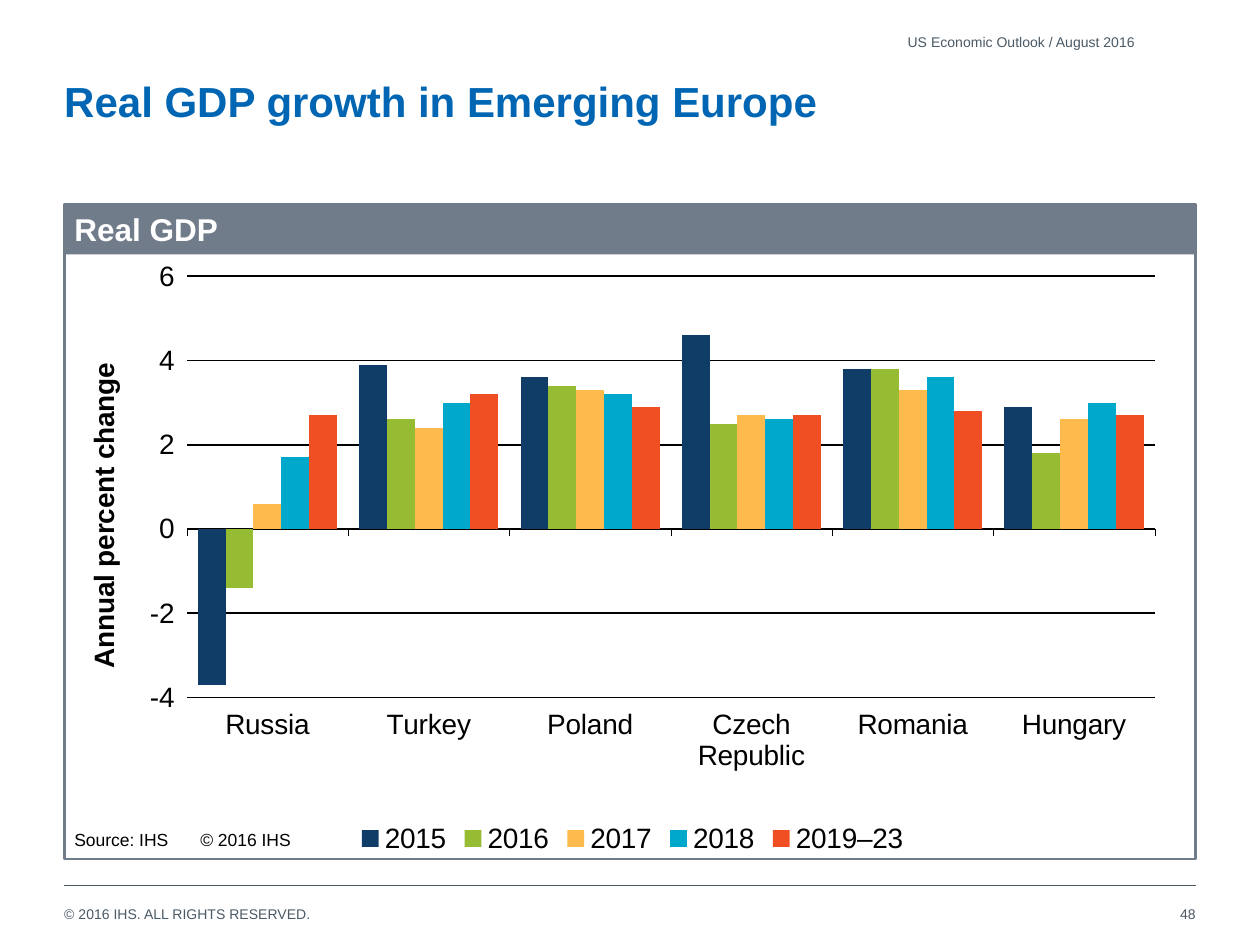
from lxml import etree
from pptx import Presentation
from pptx.chart.data import CategoryChartData
from pptx.dml.color import RGBColor
from pptx.enum.chart import XL_CHART_TYPE, XL_LEGEND_POSITION, XL_TICK_LABEL_POSITION, XL_TICK_MARK
from pptx.enum.shapes import MSO_CONNECTOR, MSO_SHAPE
from pptx.enum.text import MSO_ANCHOR, PP_ALIGN
from pptx.oxml import parse_xml
from pptx.oxml.ns import nsdecls, qn
from pptx.util import Pt

BLACK = RGBColor(0x00, 0x00, 0x00)
WHITE = RGBColor(0xFF, 0xFF, 0xFF)
BLUE = RGBColor(0x00, 0x66, 0xB3)
SLATE = RGBColor(0x49, 0x59, 0x65)
GRAY = RGBColor(0x70, 0x7C, 0x8A)
FONT = "Arial"
LEFT, WIDTH = 36.7, 646.6
PANEL_TOP, PANEL_HEIGHT = 116.6, 374.4

CATEGORIES = ["Russia", "Turkey", "Poland", "Czech Republic", "Romania", "Hungary"]
SERIES = [
    ("2015", [-3.7, 3.9, 3.6, 4.6, 3.8, 2.9], RGBColor(0x10, 0x3C, 0x68)),
    ("2016", [-1.4, 2.6, 3.4, 2.5, 3.8, 1.8], RGBColor(0x96, 0xBC, 0x33)),
    ("2017", [0.6, 2.4, 3.3, 2.7, 3.3, 2.6], RGBColor(0xFD, 0xBA, 0x4D)),
    ("2018", [1.7, 3, 3.2, 2.6, 3.6, 3], RGBColor(0x00, 0xA9, 0xCB)),
    ("2019–23", [2.7, 3.2, 2.9, 2.7, 2.8, 2.7], RGBColor(0xF0, 0x4E, 0x23)),
]


def write_text(shape, text, size=8, color=SLATE, bold=False, align=PP_ALIGN.LEFT,
               anchor=MSO_ANCHOR.MIDDLE, margins=(0, 0), tab=None):
    """Fill a shape with one paragraph; margins are horizontal, vertical."""
    frame = shape.text_frame
    frame.word_wrap = True
    frame.vertical_anchor = anchor
    frame.margin_left = frame.margin_right = Pt(margins[0])
    frame.margin_top = frame.margin_bottom = Pt(margins[1])
    paragraph = frame.paragraphs[0]
    paragraph.alignment = align
    if tab:
        tabs = etree.SubElement(paragraph._p.get_or_add_pPr(), qn("a:tabLst"))
        etree.SubElement(tabs, qn("a:tab"), pos=str(Pt(tab)), algn="l")
    run = paragraph.add_run()
    run.text = text
    run.font.name = FONT
    run.font.size = Pt(size)
    run.font.bold = bold
    run.font.color.rgb = color


presentation = Presentation()
presentation.slide_width, presentation.slide_height = Pt(720), Pt(540)
slide = presentation.slides.add_slide(presentation.slide_layouts[5])
shapes = slide.shapes

# Title
title = shapes.title
title.left, title.top, title.width, title.height = Pt(LEFT), Pt(43.2), Pt(WIDTH), Pt(62.6)
write_text(title, "Real GDP growth in Emerging Europe", size=24, color=BLUE, bold=True,
           anchor=MSO_ANCHOR.TOP)

# Footer rule
rule = shapes.add_connector(MSO_CONNECTOR.STRAIGHT, Pt(LEFT), Pt(506.2), Pt(LEFT + WIDTH), Pt(506.2))
rule.line.color.rgb = SLATE
rule.line.width = Pt(0.5)
etree.SubElement(rule._element.spPr, qn("a:effectLst"))

# Chart
chart_data = CategoryChartData(number_format="0.0")
chart_data.categories = CATEGORIES
for name, values, color in SERIES:
    chart_data.add_series(name, values)
chart = shapes.add_chart(XL_CHART_TYPE.COLUMN_CLUSTERED, Pt(45.4), Pt(145.4), Pt(632.2), Pt(345.6),
                         chart_data).chart
chart.has_title = False
chart.font.name = FONT
chart.font.size = Pt(16)
chart.font.color.rgb = BLACK
chart.has_legend = True
chart.legend.position = XL_LEGEND_POSITION.BOTTOM
chart.legend.include_in_layout = False

plot = chart.plots[0]
plot.vary_by_categories = False
plot.gap_width = 80
plot.overlap = 0
for series, (name, values, color) in zip(plot.series, SERIES):
    series.format.fill.solid()
    series.format.fill.fore_color.rgb = color
    series.invert_if_negative = False

category_axis = chart.category_axis
category_axis.tick_label_position = XL_TICK_LABEL_POSITION.LOW
category_axis.major_tick_mark = XL_TICK_MARK.OUTSIDE
category_axis.format.line.color.rgb = BLACK
category_axis.format.line.width = Pt(0.25)

value_axis = chart.value_axis
value_axis.minimum_scale, value_axis.maximum_scale, value_axis.major_unit = -4, 6, 2
value_axis.major_tick_mark = XL_TICK_MARK.OUTSIDE
value_axis.tick_labels.number_format = "0"
value_axis.tick_labels.number_format_is_linked = False
value_axis.format.line.fill.background()
value_axis.major_gridlines.format.line.color.rgb = BLACK
value_axis.major_gridlines.format.line.width = Pt(1)
axis_title = value_axis.axis_title.text_frame
axis_title.text = "Annual percent change"
axis_font = axis_title.paragraphs[0].runs[0].font
axis_font.name, axis_font.size, axis_font.bold = FONT, Pt(16), True
axis_font.color.rgb = BLACK
axis_title._txBody.find(qn("a:bodyPr")).set("rot", "-5400000")

# Fixed inner plot area, as fractions of the chart
plot_area = chart._chartSpace.chart.plotArea
for old_layout in plot_area.findall(qn("c:layout")):
    plot_area.remove(old_layout)
plot_area.insert(0, parse_xml(
    f'<c:layout {nsdecls("c")}><c:manualLayout><c:layoutTarget val="inner"/>'
    '<c:xMode val="edge"/><c:yMode val="edge"/><c:x val="0.097"/><c:y val="0.036"/>'
    '<c:w val="0.875"/><c:h val="0.697"/></c:manualLayout></c:layout>'))

# Panel header and frame
header = shapes.add_shape(MSO_SHAPE.RECTANGLE, Pt(LEFT), Pt(PANEL_TOP), Pt(WIDTH), Pt(28.8))
header.shadow.inherit = False
header.fill.solid()
header.fill.fore_color.rgb = GRAY
header.line.fill.background()
write_text(header, "Real GDP", size=18, color=WHITE, bold=True, margins=(5.76, 2.88))

frame = shapes.add_shape(MSO_SHAPE.RECTANGLE, Pt(LEFT), Pt(PANEL_TOP), Pt(WIDTH), Pt(PANEL_HEIGHT))
frame.shadow.inherit = False
frame.fill.background()
frame.line.color.rgb = GRAY
frame.line.width = Pt(1.5)

# Source, page header and footer
TEXT_BOXES = [
    ("Source: IHS\t© 2016 IHS", (LEFT, 468.7, WIDTH, 22.3),
     dict(size=10, color=BLACK, margins=(5.76, 5.76), tab=72)),
    ("US Economic Outlook / August 2016", (LEFT, 15.1, 612, 17.3), dict(align=PP_ALIGN.RIGHT)),
    ("© 2016 IHS. ALL RIGHTS RESERVED.", (LEFT, 517.7, 493.2, 9.4), dict(anchor=MSO_ANCHOR.TOP)),
    ("48", (520.6, 507.6, 162.7, 28.8), dict(align=PP_ALIGN.RIGHT)),
]
for text, box, text_format in TEXT_BOXES:
    write_text(shapes.add_textbox(*map(Pt, box)), text, **text_format)

presentation.save("out.pptx")
